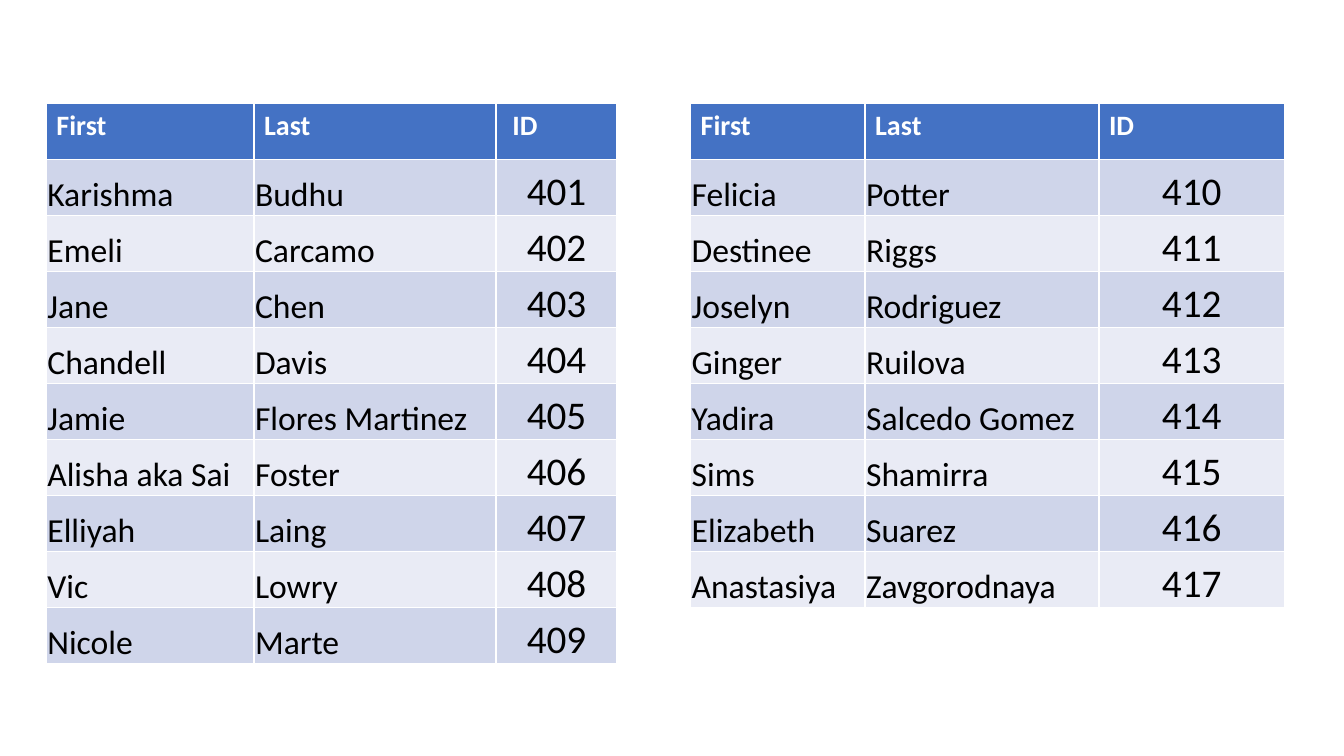
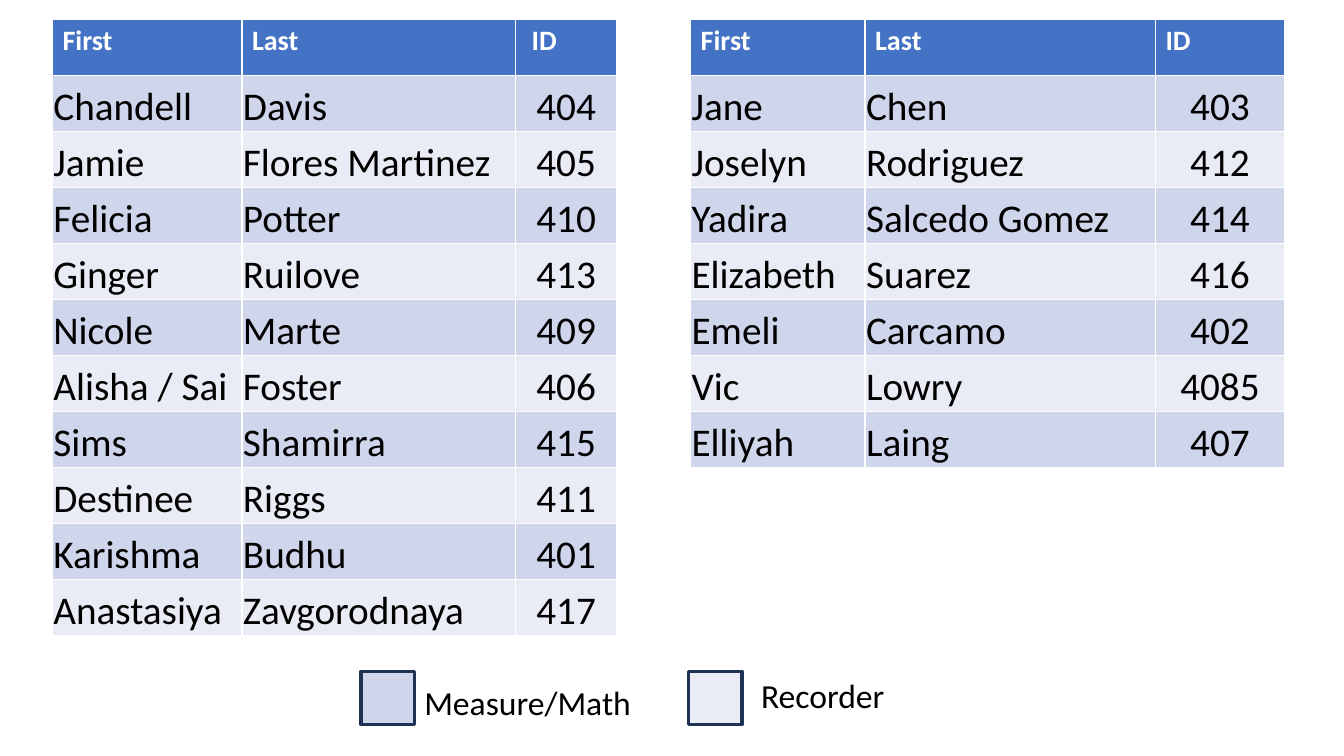
"""Build two roster slides with paired name tables and a role legend."""
from pptx import Presentation
from pptx.dml.color import RGBColor
from pptx.enum.shapes import MSO_SHAPE
from pptx.enum.text import MSO_ANCHOR, MSO_AUTO_SIZE, PP_ALIGN
from pptx.util import Inches, Pt

FONT = "Calibri"
COLORS = {
    "header": "4472C4",
    "measure": "CFD5EA",
    "recorder": "E9EBF5",
    "outline": "1E3256",
    "white": "FFFFFF",
    "black": "000000",
}
BANDS = ["measure", "recorder"]
ROW_HEIGHT = Inches(5 / 9)
CELL_INSET = Inches(0.01)


def style_text(paragraph, size, color, bold=False):
    font = paragraph.runs[0].font
    font.name = FONT
    font.size = Pt(size)
    font.bold = bold
    font.color.rgb = RGBColor.from_string(COLORS[color])


def add_roster(page, left, top, widths, id_heading, people, name_size):
    rows = [("First", "Last", id_heading)] + people
    table = page.shapes.add_table(
        len(rows), len(widths), Inches(left), Inches(top),
        Inches(sum(widths)), ROW_HEIGHT * len(rows),
    ).table
    for column, width in zip(table.columns, widths):
        column.width = Inches(width)
    for row_index, values in enumerate(rows):
        table.rows[row_index].height = ROW_HEIGHT
        for column_index, value in enumerate(values):
            cell = table.cell(row_index, column_index)
            cell.text_frame.text = value
            paragraph = cell.text_frame.paragraphs[0]
            cell.fill.solid()
            if row_index == 0:
                fill = "header"
                style_text(paragraph, 20, "white", bold=True)
            else:
                fill = BANDS[(row_index - 1) % 2]
                is_id = column_index == 2
                style_text(paragraph, 28 if is_id else name_size, "black")
                if is_id:
                    paragraph.alignment = PP_ALIGN.CENTER
                cell.vertical_anchor = MSO_ANCHOR.BOTTOM
                cell.margin_left = cell.margin_right = cell.margin_top = CELL_INSET
                cell.margin_bottom = 0
            cell.fill.fore_color.rgb = RGBColor.from_string(COLORS[fill])


deck = Presentation()
deck.slide_width = Inches(13.33)
deck.slide_height = Inches(7.5)
blank_layout = deck.slide_layouts[6]

roster_page = deck.slides.add_slide(blank_layout)
add_roster(roster_page, 0.46, 1.03, [2.06, 2.4, 1.2], " ID", [
    ("Karishma", "Budhu", "401"),
    ("Emeli", "Carcamo", "402"),
    ("Jane", "Chen", "403"),
    ("Chandell", "Davis", "404"),
    ("Jamie", "Flores Martinez", "405"),
    ("Alisha aka Sai", "Foster", "406"),
    ("Elliyah", "Laing", "407"),
    ("Vic", "Lowry", "408"),
    ("Nicole", "Marte", "409"),
], 24)
add_roster(roster_page, 6.85, 1.03, [1.73, 2.32, 1.84], "ID", [
    ("Felicia", "Potter", "410"),
    ("Destinee", "Riggs", "411"),
    ("Joselyn", "Rodriguez", "412"),
    ("Ginger", "Ruilova", "413"),
    ("Yadira", "Salcedo Gomez", "414"),
    ("Sims", "Shamirra", "415"),
    ("Elizabeth", "Suarez", "416"),
    ("Anastasiya", "Zavgorodnaya", "417"),
], 24)

roles_page = deck.slides.add_slide(blank_layout)
legend = [
    ("measure", 3.58, "Measure/Math", 4.11, 6.72, 2.27),
    ("recorder", 6.83, "Recorder", 7.45, 6.65, 1.44),
]
for role, swatch_left, label, label_left, label_top, label_width in legend:
    entry = roles_page.shapes.add_group_shape()
    swatch = entry.shapes.add_shape(
        MSO_SHAPE.RECTANGLE, Inches(swatch_left), Inches(6.66), Inches(0.53), Inches(0.53)
    )
    swatch.shadow.inherit = False
    swatch.fill.solid()
    swatch.fill.fore_color.rgb = RGBColor.from_string(COLORS[role])
    swatch.line.color.rgb = RGBColor.from_string(COLORS["outline"])
    swatch.line.width = Pt(2.5)
    box = entry.shapes.add_textbox(
        Inches(label_left), Inches(label_top), Inches(label_width), Inches(0.5)
    )
    box.text_frame.word_wrap = False
    box.text_frame.auto_size = MSO_AUTO_SIZE.SHAPE_TO_FIT_TEXT
    box.text_frame.text = label
    style_text(box.text_frame.paragraphs[0], 24, "black")

add_roster(roles_page, 0.52, 0.19, [1.88, 2.71, 1.01], " ID", [
    ("Chandell", "Davis", "404"),
    ("Jamie", "Flores Martinez", "405"),
    ("Felicia", "Potter", "410"),
    ("Ginger", "Ruilove", "413"),
    ("Nicole", "Marte", "409"),
    ("Alisha / Sai", "Foster", "406"),
    ("Sims", "Shamirra", "415"),
    ("Destinee", "Riggs", "411"),
    ("Karishma", "Budhu", "401"),
    ("Anastasiya", "Zavgorodnaya", "417"),
], 28)
add_roster(roles_page, 6.85, 0.19, [1.73, 2.88, 1.28], "ID", [
    ("Jane", "Chen", "403"),
    ("Joselyn", "Rodriguez", "412"),
    ("Yadira", "Salcedo Gomez", "414"),
    ("Elizabeth", "Suarez", "416"),
    ("Emeli", "Carcamo", "402"),
    ("Vic", "Lowry", "4085"),
    ("Elliyah", "Laing", "407"),
], 28)

deck.save("out.pptx")
